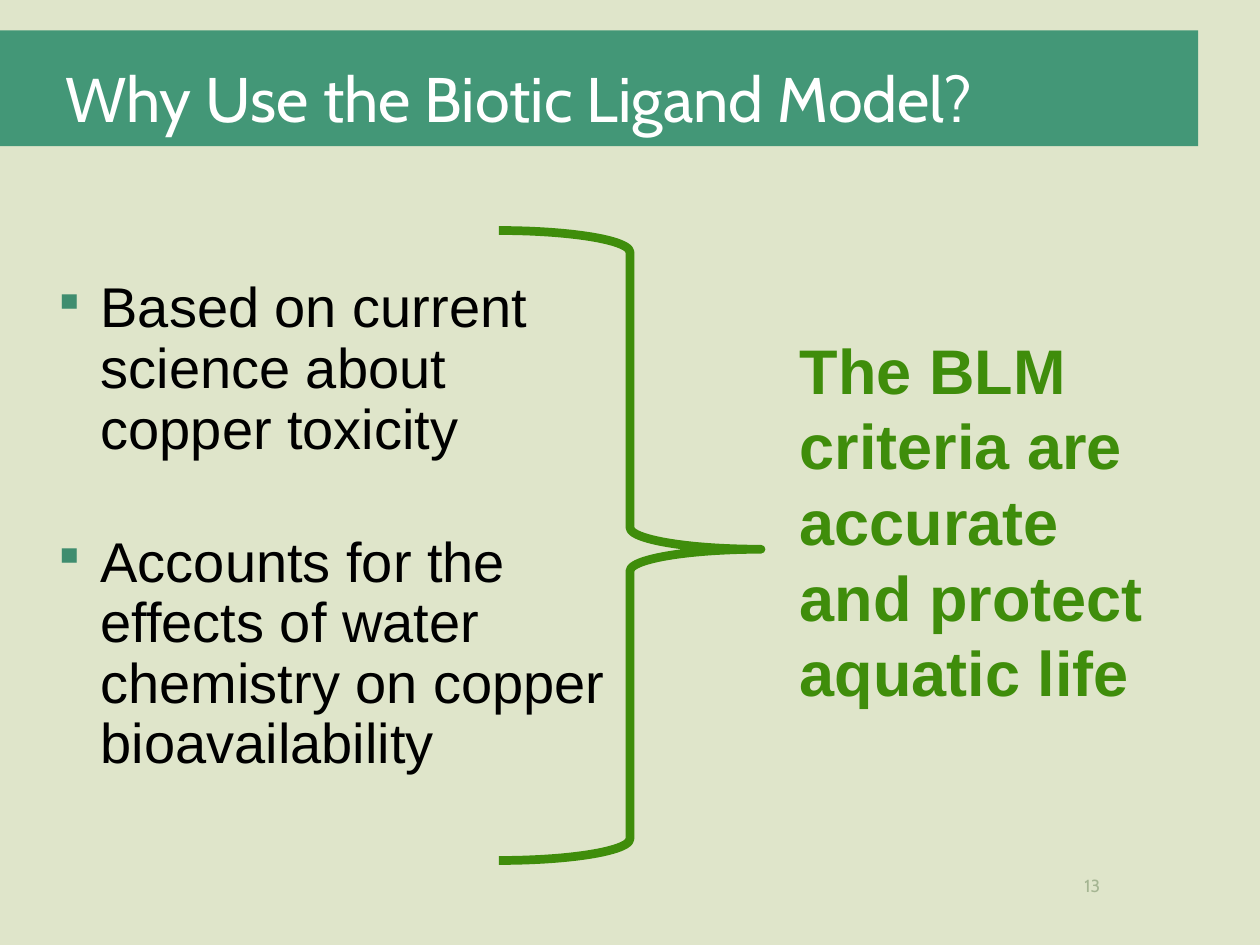
import dataclasses

import lxml.etree
import pptx
import pptx.dml.color
import pptx.enum.shapes
import pptx.enum.text
import pptx.oxml.ns
import pptx.util

Inches = pptx.util.Inches
Pt = pptx.util.Pt
Shapes = pptx.enum.shapes.MSO_SHAPE
Anchor = pptx.enum.text.MSO_ANCHOR
Align = pptx.enum.text.PP_ALIGN


def rgb(value):
    return pptx.dml.color.RGBColor.from_string(value)


@dataclasses.dataclass(frozen=True)
class Theme:
    # Colours
    background: str = "DFE5CA"
    banner: str = "439777"
    bullet: str = "3F8D6F"
    accent: str = "3F8D0B"
    body: str = "000000"
    light: str = "FFFFFF"
    muted: str = "A5B592"
    # Fonts and sizes
    heading_font: str = "Cabin"
    body_font: str = "Arial"
    heading_size: int = 36
    body_size: int = 32
    number_size: int = 10


class SlideBuilder:
    def __init__(self, slide, theme):
        self.slide = slide
        self.theme = theme
        slide.background.fill.solid()
        slide.background.fill.fore_color.rgb = rgb(theme.background)

    def apply(self, target, values):
        for name, value in values.items():
            setattr(target, name, value)

    def style(self, font, face, size, colour, bold=False):
        self.apply(font, {"name": face, "size": Pt(size), "bold": bold})
        font.color.rgb = rgb(colour)

    def shape(self, kind, box, fill=None, line=None, weight=0, adjustments=()):
        shape = self.slide.shapes.add_shape(kind, *map(Inches, box))
        shape.shadow.inherit = False
        for index, value in enumerate(adjustments):
            shape.adjustments[index] = value
        if fill:
            shape.fill.solid()
            shape.fill.fore_color.rgb = rgb(fill)
        else:
            shape.fill.background()
        if line:
            shape.line.color.rgb = rgb(line)
            shape.line.width = Pt(weight)
        else:
            shape.line.fill.background()
        return shape

    def text(self, box, words, font, anchor=Anchor.TOP, align=Align.LEFT):
        frame = self.slide.shapes.add_textbox(*map(Inches, box)).text_frame
        self.apply(frame, {"word_wrap": True, "vertical_anchor": anchor})
        paragraph = frame.paragraphs[0]
        paragraph.alignment = align
        run = paragraph.add_run()
        run.text = words
        self.style(run.font, *font)

    def bullets(self, box, points, font, gap):
        panel = self.shape(Shapes.RECTANGLE, box, fill=self.theme.background)
        frame = panel.text_frame
        self.apply(frame, {"word_wrap": True, "vertical_anchor": Anchor.TOP})
        for index, point in enumerate(points):
            paragraph = frame.add_paragraph() if index else frame.paragraphs[0]
            self.apply(paragraph, {
                "alignment": Align.LEFT,
                "line_spacing": 0.9,
                "space_before": Pt(gap if index else 0),
            })
            run = paragraph.add_run()
            run.text = point
            self.style(run.font, *font)
            self.add_bullet(paragraph)

    def add_bullet(self, paragraph):
        qn = pptx.oxml.ns.qn
        properties = paragraph._p.get_or_add_pPr()
        properties.set("marL", str(Inches(0.41)))
        properties.set("indent", str(Inches(-0.38)))
        colour = lxml.etree.SubElement(properties, qn("a:buClr"))
        lxml.etree.SubElement(colour, qn("a:srgbClr"), val=self.theme.bullet)
        lxml.etree.SubElement(properties, qn("a:buSzPct"), val="80000")
        lxml.etree.SubElement(properties, qn("a:buChar"), char="▪")


def main():
    presentation = pptx.Presentation()
    presentation.slide_width = Inches(10)
    presentation.slide_height = Inches(7.5)
    theme = Theme()
    blank = presentation.slide_layouts[6]
    page = SlideBuilder(presentation.slides.add_slide(blank), theme)

    # Title banner
    page.shape(Shapes.RECTANGLE, (0, 0.24, 9.51, 0.92), fill=theme.banner)

    # Reasons
    reasons = (
        "Based on current science about copper toxicity",
        "Accounts for the effects of water chemistry on copper bioavailability",
    )
    page.bullets((0.29, 2.17, 4.75, 5), reasons,
                 (theme.body_font, theme.body_size, theme.body), gap=41.5)

    # Title
    page.text((0.42, 0.42, 9.32, 0.71), "Why Use the Biotic Ligand Model?",
              (theme.heading_font, theme.heading_size, theme.light))

    # Brace leading from the reasons to the conclusion
    page.shape(Shapes.RIGHT_BRACE, (3.96, 1.83, 2.08, 5),
               line=theme.accent, weight=5, adjustments=(0.083, 0.506))

    # Conclusion
    page.text((6.25, 2.58, 3.12, 3.13),
              "The BLM criteria are accurate and protect aquatic life",
              (theme.body_font, theme.heading_size, theme.accent, True))

    # Page number
    page.text((8, 6.83, 0.83, 0.4), "13",
              (theme.heading_font, theme.number_size, theme.muted),
              anchor=Anchor.MIDDLE, align=Align.RIGHT)

    presentation.save("out.pptx")


if __name__ == "__main__":
    main()
